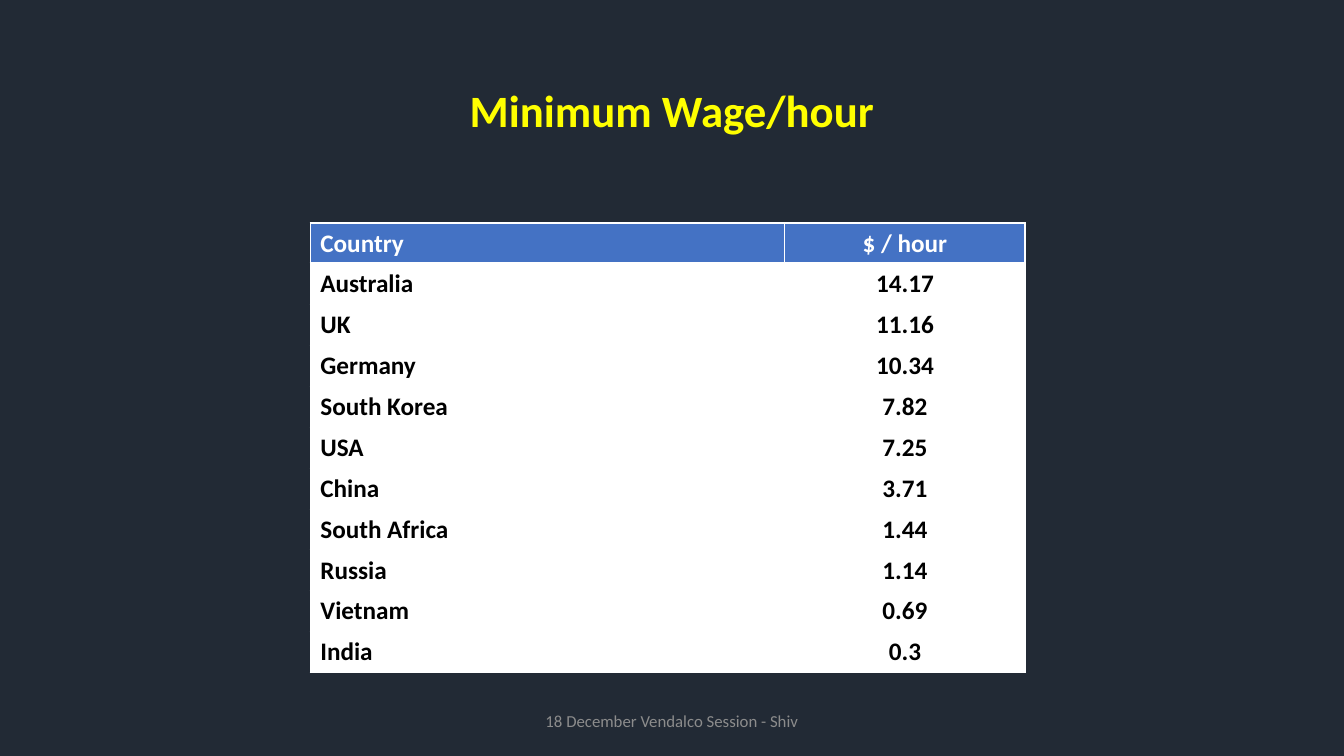
from typing import NamedTuple

from pptx import Presentation
from pptx.dml.color import RGBColor
from pptx.enum.text import MSO_ANCHOR as Anchor, PP_ALIGN as Align
from pptx.oxml import parse_xml
from pptx.oxml.ns import nsdecls
from pptx.util import Cm, Pt

COLORS = {
    "background": "222A35",
    "title": "FFFF00",
    "header": "4472C4",
    "white": "FFFFFF",
    "black": "000000",
    "footer": "8C8C8C",
}
FONT = "Calibri"
ROW_HEIGHT = Cm(1.03)
COLUMN_WIDTHS = (Cm(11.96), Cm(6.05))
COLUMN_ALIGNS = (Align.LEFT, Align.CENTER)


class Wage(NamedTuple):
    country: str
    rate: str


HEADINGS = Wage("Country", "$ / hour")
WAGES = [
    Wage("Australia", "14.17"),
    Wage("UK", "11.16"),
    Wage("Germany", "10.34"),
    Wage("South Korea", "7.82"),
    Wage("USA", "7.25"),
    Wage("China", "3.71"),
    Wage("South Africa", "1.44"),
    Wage("Russia", "1.14"),
    Wage("Vietnam", "0.69"),
    Wage("India", "0.3"),
]


def rgb(name: str) -> RGBColor:
    return RGBColor.from_string(COLORS[name])


def write(frame, text: str, size: int, color: str, bold: bool, align: Align) -> None:
    frame.text = text
    paragraph = frame.paragraphs[0]
    paragraph.alignment = align
    font = paragraph.font
    font.name, font.size, font.bold = FONT, Pt(size), bold
    font.color.rgb = rgb(color)


def add_borders(cell, bottom: int) -> None:
    properties = cell._tc.get_or_add_tcPr()
    for side, points in (("L", 1), ("R", 1), ("T", 1), ("B", bottom)):
        properties.append(parse_xml(
            f'<a:ln{side} {nsdecls("a")} w="{Pt(points)}"><a:solidFill>'
            f'<a:srgbClr val="{COLORS["white"]}"/></a:solidFill></a:ln{side}>'))


def add_title(slide) -> None:
    title = slide.shapes.title
    title.left, title.top = Cm(2.33), Cm(1.01)
    title.width, title.height = Cm(29.21), Cm(3.68)
    frame = title.text_frame
    frame.vertical_anchor = Anchor.MIDDLE
    write(frame, "Minimum Wage/hour", 32, "title", True, Align.CENTER)
    frame.paragraphs[0].line_spacing = 0.9


def add_wage_table(slide) -> None:
    rows = [HEADINGS, *WAGES]
    table = slide.shapes.add_table(
        len(rows), len(COLUMN_WIDTHS), Cm(7.82), Cm(5.62),
        sum(COLUMN_WIDTHS), ROW_HEIGHT * len(rows)).table
    table.horz_banding = False
    for column, width in zip(table.columns, COLUMN_WIDTHS):
        column.width = width
    for index, wage in enumerate(rows):
        is_header = index == 0
        for col, (text, align) in enumerate(zip(wage, COLUMN_ALIGNS)):
            cell = table.cell(index, col)
            add_borders(cell, 3 if is_header else 1)
            cell.fill.solid()
            cell.fill.fore_color.rgb = rgb("header" if is_header else "white")
            write(cell.text_frame, text, 18,
                  "white" if is_header else "black", True, align)


def add_footer(slide) -> None:
    footer = slide.shapes.add_textbox(Cm(11.22), Cm(17.66), Cm(11.43), Cm(1.01))
    frame = footer.text_frame
    frame.word_wrap = True
    frame.vertical_anchor = Anchor.MIDDLE
    write(frame, "18 December Vendalco Session - Shiv", 12, "footer", False, Align.CENTER)


def main() -> None:
    deck = Presentation()
    deck.slide_width, deck.slide_height = Cm(33.87), Cm(19.05)
    slide = deck.slides.add_slide(deck.slide_layouts[5])  # title only
    slide.background.fill.solid()
    slide.background.fill.fore_color.rgb = rgb("background")
    add_title(slide)
    add_wage_table(slide)
    add_footer(slide)
    deck.save("out.pptx")


if __name__ == "__main__":
    main()
